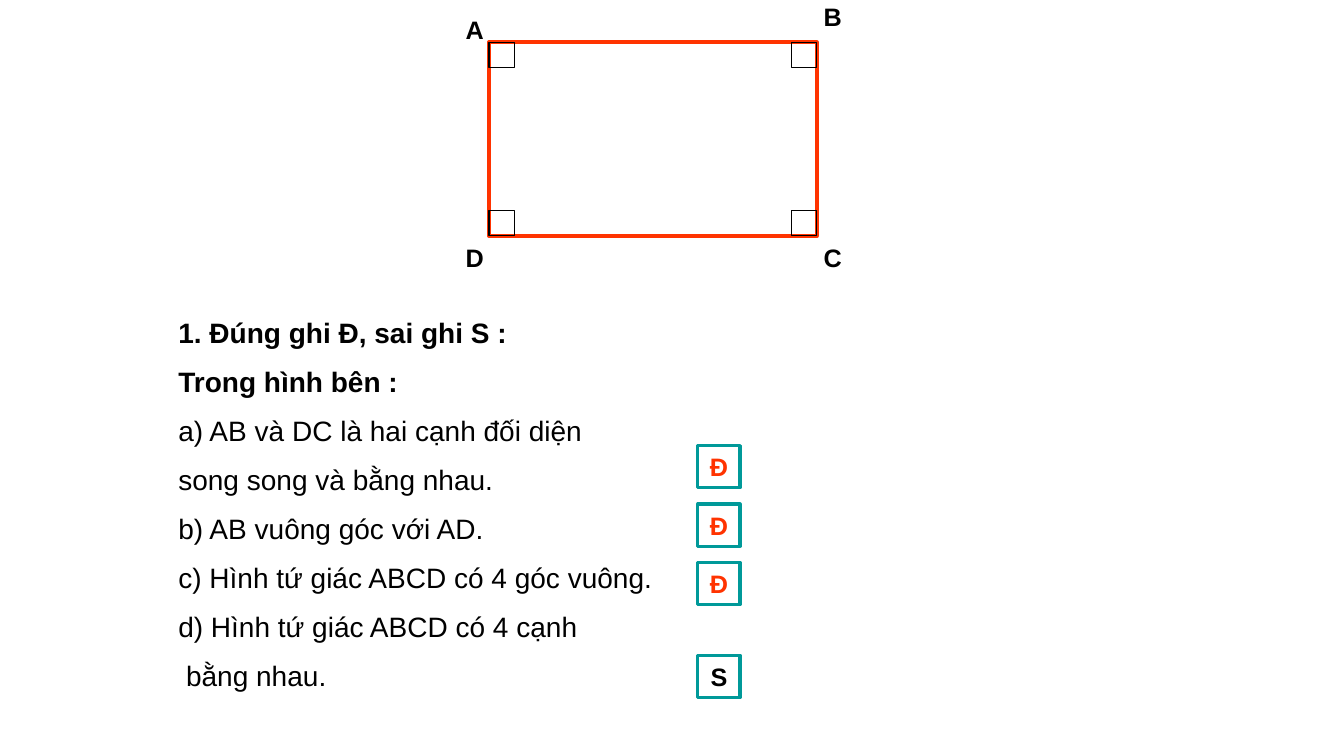
from dataclasses import dataclass
from itertools import product

from pptx import Presentation
from pptx import util as u
from pptx.dml.color import RGBColor
from pptx.enum import shapes, text

BLACK = "000000"
RED = "FF3300"
TEAL = "009999"


@dataclass
class Line:
    words: str
    bold: bool = True
    color: str = BLACK


@dataclass
class Vertex:
    letter: str
    left: float
    top: float


@dataclass
class Answer:
    letter: str
    top: float
    color: str = RED


LEFT, TOP, WIDTH, HEIGHT = 4.85, 0.42, 3.25, 1.92
MARK = 0.25
ANSWER_LEFT, ANSWER_SIZE = 6.92, 0.42

VERTICES = [
    Vertex("A", 4.52, 0.09),
    Vertex("B", 8.07, -0.04),
    Vertex("D", 4.52, 2.35),
    Vertex("C", 8.07, 2.35),
]
EXERCISE = [
    Line("1. Đúng ghi Đ, sai ghi S :"),
    Line("Trong hình bên :"),
    Line("a) AB và DC là hai cạnh đối diện", False),
    Line("song song và bằng nhau.", False),
    Line("b) AB vuông góc với AD.", False),
    Line("c) Hình tứ giác ABCD có 4 góc vuông.", False),
    Line("d) Hình tứ giác ABCD có 4 cạnh", False),
    Line(" bằng nhau.", False),
]
ANSWERS = [
    Answer("Đ", 4.42),
    Answer("Đ", 5),
    Answer("Đ", 5.58),
    Answer("S", 6.5, BLACK),
]


def rgb(value: str) -> RGBColor:
    return RGBColor.from_string(value)


def write(box, lines: list[Line], size: int, gap: int = 0) -> None:
    for index, line in enumerate(lines):
        para = box.text_frame.paragraphs[0] if index == 0 else box.text_frame.add_paragraph()
        para.space_before = u.Pt(gap if index else 0)
        span = para.add_run()
        span.text = line.words
        span.font.name = "Arial"
        span.font.size = u.Pt(size)
        span.font.bold = line.bold
        span.font.color.rgb = rgb(line.color)


def add_text(page, left: float, top: float, width: float, height: float,
             lines: list[Line], size: int, gap: int = 0) -> None:
    box = page.shapes.add_textbox(
        u.Inches(left), u.Inches(top), u.Inches(width), u.Inches(height))
    box.text_frame.word_wrap = True
    write(box, lines, size, gap)


def add_outline(page, kind, left: float, top: float, width: float, height: float,
                color: str, weight: float):
    shape = page.shapes.add_shape(
        kind, u.Inches(left), u.Inches(top), u.Inches(width), u.Inches(height))
    shape.shadow.inherit = False
    shape.fill.background()
    shape.line.color.rgb = rgb(color)
    shape.line.width = u.Pt(weight)
    return shape


def add_answer(page, answer: Answer) -> None:
    box = add_outline(page, shapes.MSO_SHAPE.RECTANGLE, ANSWER_LEFT, answer.top,
                      ANSWER_SIZE, ANSWER_SIZE, TEAL, 2.25)
    box.text_frame.word_wrap = False
    box.text_frame.vertical_anchor = text.MSO_ANCHOR.MIDDLE
    write(box, [Line(answer.letter, color=answer.color)], 18)
    box.text_frame.paragraphs[0].alignment = text.PP_ALIGN.CENTER


def main() -> None:
    deck = Presentation()
    deck.slide_width = u.Inches(13.33)
    deck.slide_height = u.Inches(7.5)
    page = deck.slides.add_slide(deck.slide_layouts[6])

    add_outline(page, shapes.MSO_SHAPE.FLOWCHART_PROCESS,
                LEFT, TOP, WIDTH, HEIGHT, RED, 3)
    for left, top in product((LEFT, LEFT + WIDTH - MARK), (TOP, TOP + HEIGHT - MARK)):
        add_outline(page, shapes.MSO_SHAPE.RECTANGLE, left, top, MARK, MARK, BLACK, 0.75)

    add_text(page, 1.67, 3.08, 5.67, 3.93, EXERCISE, 20, 11)
    for answer in ANSWERS:
        add_answer(page, answer)
    for vertex in VERTICES:
        add_text(page, vertex.left, vertex.top, 0.42, 0.4, [Line(vertex.letter)], 18)

    deck.save("out.pptx")


if __name__ == "__main__":
    main()
